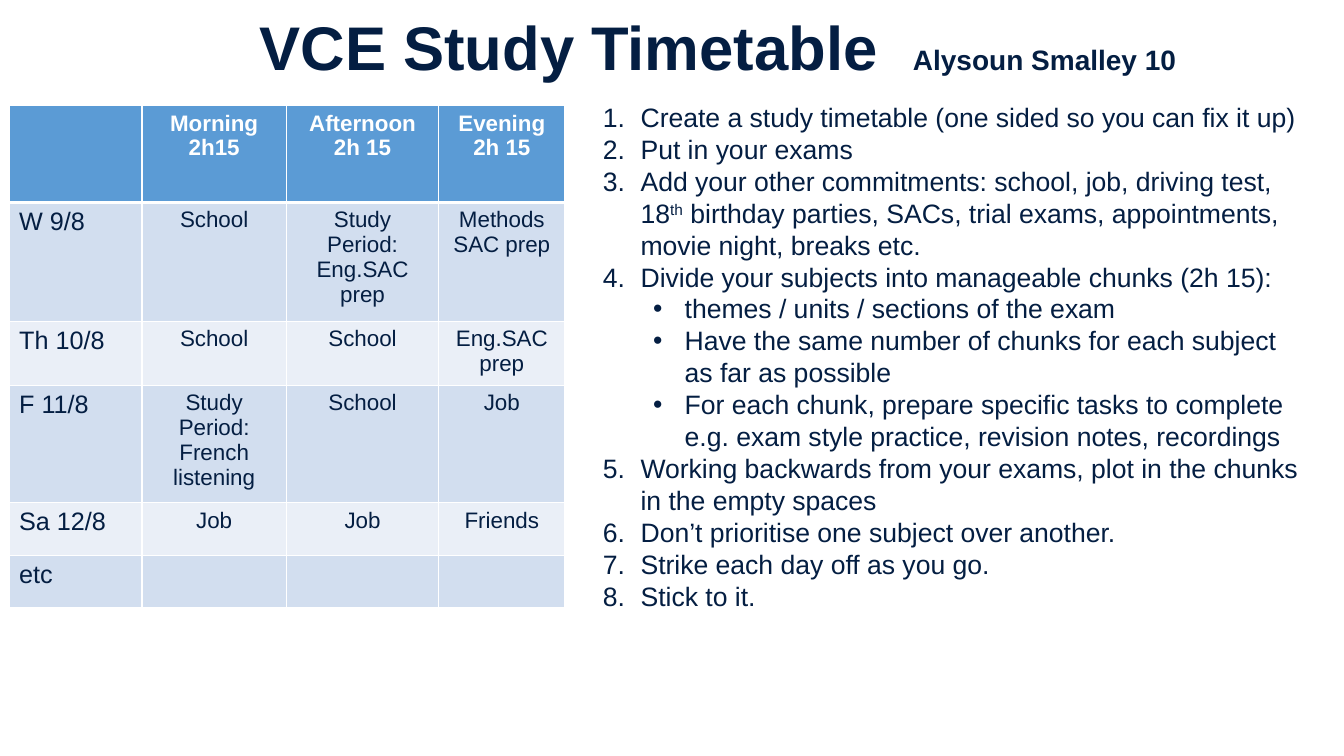
from dataclasses import dataclass

from lxml.etree import SubElement
from pptx import Presentation
from pptx.dml.color import RGBColor
from pptx.enum.text import MSO_ANCHOR, PP_ALIGN
from pptx.oxml.ns import qn
from pptx.util import Pt


@dataclass(frozen=True)
class Theme:
    font: str = "Arial"
    ink: str = "041E42"
    white: str = "FFFFFF"
    header: str = "5B9BD5"
    bands: tuple[str, str] = ("D2DEEF", "EAEFF7")
    title: float = 44
    author: float = 20
    day: float = 18
    cell: float = 16
    step: float = 19


@dataclass(frozen=True)
class Box:
    left: float
    top: float
    width: float
    height: float

    def lengths(self) -> tuple:
        return Pt(self.left), Pt(self.top), Pt(self.width), Pt(self.height)


@dataclass(frozen=True)
class Step:
    text: str
    start: int = 1
    sub: bool = False
    raised: str = ""
    rest: str = ""


THEME = Theme()
TITLE_BOX = Box(178.5, -16, 828, 104.5)
TABLE_BOX = Box(6.5, 75.6, 397, 354)
STEPS_BOX = Box(423.5, 68.5, 512, 441.5)
AUTHOR_TAB = 466.5
COLUMNS = (95, 103, 109, 90)
ROWS = (69, 85, 44, 81, 37.5, 37.5)
TIMETABLE = (
    ("", "Morning\n2h15", "Afternoon\n2h 15", "Evening\n2h 15"),
    ("W 9/8", "School", "Study Period:\nEng.SAC prep", "Methods\nSAC prep"),
    ("Th 10/8", "School", "School", "Eng.SAC prep"),
    ("F 11/8", "Study Period:\nFrench listening", "School", "Job"),
    ("Sa 12/8", "Job", "Job", "Friends"),
    ("etc", "", "", ""),
)
STEPS = (
    Step("Create a study timetable (one sided so you can fix it up)"),
    Step("Put in your exams"),
    Step("Add your other commitments: school, job, driving test, 18", raised="th",
         rest=" birthday parties, SACs, trial exams, appointments, movie night, breaks etc."),
    Step("Divide your subjects into manageable chunks (2h 15):"),
    Step("themes / units / sections of the exam", sub=True),
    Step("Have the same number of chunks for each subject as far as possible", sub=True),
    Step("For each chunk, prepare specific tasks to complete e.g. exam style practice, "
         "revision notes, recordings", sub=True),
    Step("Working backwards from your exams, plot in the chunks in the empty spaces", start=5),
    Step("Don’t prioritise one subject over another.", start=5),
    Step("Strike each day off as you go.", start=5),
    Step("Stick to it.", start=5),
)


def add_text(p, text: str, *, size: float, color: str = THEME.ink,
             bold: bool = False, raised: bool = False) -> None:
    r = p.add_run()
    r.text = text
    r.font.name = THEME.font
    r.font.size = Pt(size)
    r.font.bold = bold
    r.font.color.rgb = RGBColor.from_string(color)
    if raised:
        r.font._element.set("baseline", "30000")


def add_box(s, box: Box):
    tf = s.shapes.add_textbox(*box.lengths()).text_frame
    tf.word_wrap = True
    return tf


def add_title(s) -> None:
    tf = add_box(s, TITLE_BOX)
    tf.vertical_anchor = MSO_ANCHOR.MIDDLE
    p = tf.paragraphs[0]
    p.line_spacing = 0.9
    tabs = SubElement(p._p.get_or_add_pPr(), qn("a:tabLst"))
    SubElement(tabs, qn("a:tab"), pos=str(Pt(AUTHOR_TAB)), algn="l")
    add_text(p, "VCE Study Timetable\t", size=THEME.title, bold=True)
    add_text(p, "Alysoun Smalley 10", size=THEME.author, bold=True)


def set_borders(cell, top: float, bottom: float) -> None:
    tcPr = cell._tc.get_or_add_tcPr()
    for side, width in (("L", 1), ("R", 1), ("T", top), ("B", bottom)):
        ln = SubElement(tcPr, qn(f"a:ln{side}"), w=str(Pt(width)))
        fill = SubElement(ln, qn("a:solidFill"))
        SubElement(fill, qn("a:srgbClr"), val=THEME.white)


def fill_cell(cell, text: str, row: int, col: int) -> None:
    header = row == 0
    set_borders(cell, top=3 if row == 1 else 1, bottom=3 if header else 1)
    cell.fill.solid()
    color = THEME.header if header else THEME.bands[(row - 1) % 2]
    cell.fill.fore_color.rgb = RGBColor.from_string(color)
    if not text:
        return
    tf = cell.text_frame
    for i, line in enumerate(text.split("\n")):
        p = tf.add_paragraph() if i else tf.paragraphs[0]
        p.alignment = PP_ALIGN.CENTER if col else PP_ALIGN.LEFT
        add_text(p, line, size=THEME.cell if col else THEME.day,
                 color=THEME.white if header else THEME.ink, bold=header)


def add_timetable(s) -> None:
    table = s.shapes.add_table(len(ROWS), len(COLUMNS), *TABLE_BOX.lengths()).table
    for column, width in zip(table.columns, COLUMNS):
        column.width = Pt(width)
    for row, height in zip(table.rows, ROWS):
        row.height = Pt(height)
    for i, texts in enumerate(TIMETABLE):
        for j, text in enumerate(texts):
            fill_cell(table.cell(i, j), text, i, j)


def set_bullet(p, step: Step) -> None:
    pPr = p._p.get_or_add_pPr()
    left, hanging = (58.5, 22.5) if step.sub else (27, 27)
    pPr.set("marL", str(Pt(left)))
    pPr.set("indent", str(-Pt(hanging)))
    SubElement(pPr, qn("a:buFont"), typeface=THEME.font)
    if step.sub:
        p.level = 1
        SubElement(pPr, qn("a:buChar"), char="•")
    else:
        number = SubElement(pPr, qn("a:buAutoNum"), type="arabicPeriod")
        if step.start > 1:
            number.set("startAt", str(step.start))


def add_steps(s) -> None:
    tf = add_box(s, STEPS_BOX)
    for i, step in enumerate(STEPS):
        p = tf.add_paragraph() if i else tf.paragraphs[0]
        set_bullet(p, step)
        add_text(p, step.text, size=THEME.step)
        if step.raised:
            add_text(p, step.raised, size=THEME.step, raised=True)
            add_text(p, step.rest, size=THEME.step)


def main() -> None:
    prs = Presentation()
    prs.slide_width, prs.slide_height = Pt(960), Pt(540)
    s = prs.slides.add_slide(prs.slide_layouts[6])
    add_title(s)
    add_timetable(s)
    add_steps(s)
    prs.save("out.pptx")


if __name__ == "__main__":
    main()
